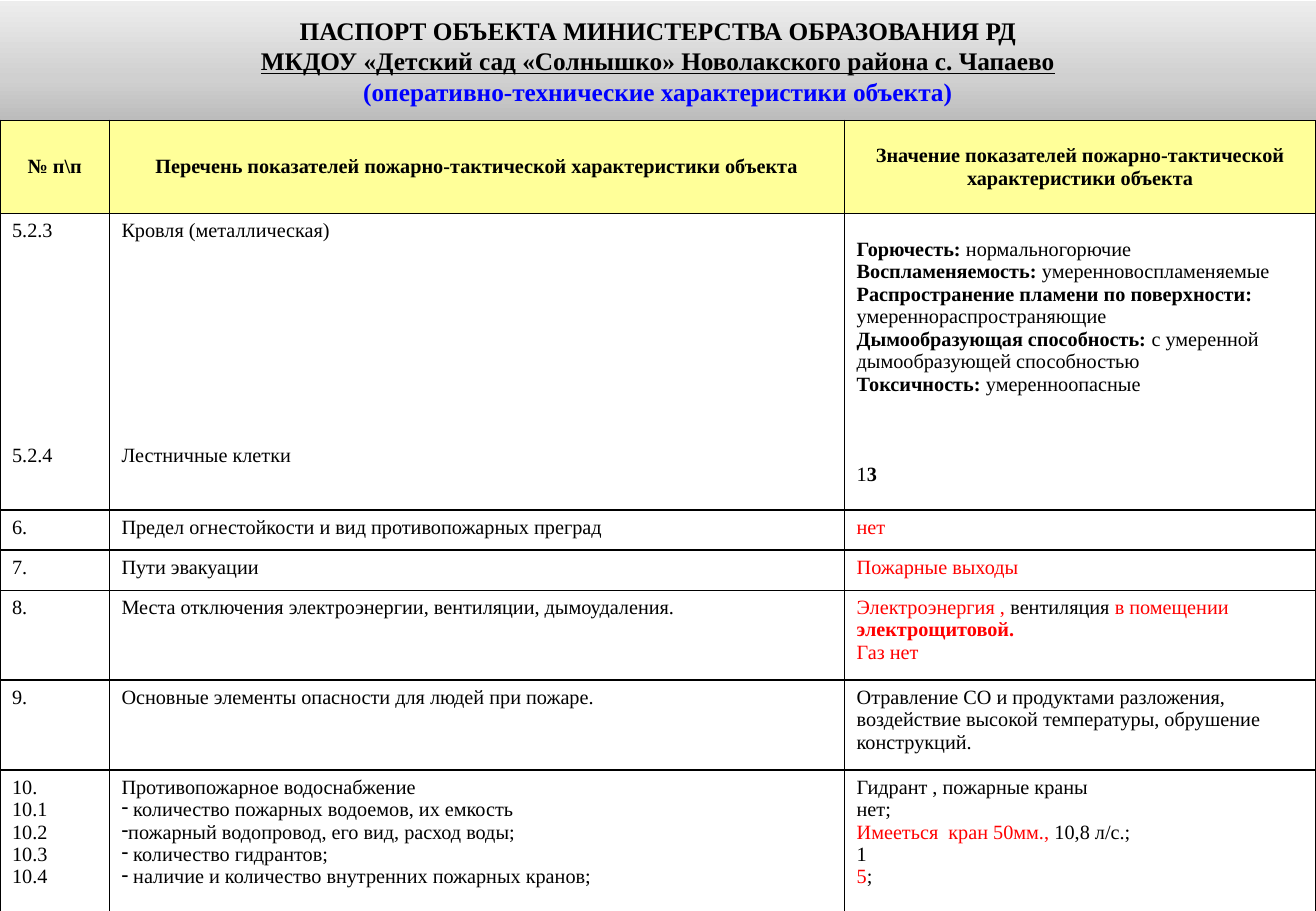
from copy import deepcopy
from dataclasses import dataclass

from pptx import Presentation
from pptx.dml.color import RGBColor
from pptx.enum.shapes import MSO_SHAPE
from pptx.enum.text import MSO_ANCHOR as Anchor, PP_ALIGN as Align
from pptx.oxml import parse_xml
from pptx.oxml.ns import nsdecls, qn
from pptx.util import Inches, Pt

FONT = "Times New Roman"
BLACK = RGBColor(0x00, 0x00, 0x00)
RED = RGBColor(0xFF, 0x00, 0x00)
BLUE = RGBColor(0x00, 0x00, 0xFF)
WHITE = RGBColor(0xFF, 0xFF, 0xFF)
YELLOW = RGBColor(0xFF, 0xFF, 0x99)
BANNER_STOPS = [(0, RGBColor(0xBC, 0xBC, 0xBC)), (0.35, RGBColor(0xD0, 0xD0, 0xD0)),
                (1, RGBColor(0xED, 0xED, 0xED))]
LINE_PITCH = 13.33  # points from line to line in the table
COLUMN_WIDTHS = [0.9, 6.05, 3.88]
ROW_HEIGHTS = [0.77, 2.44, 0.33, 0.33, 0.74, 0.74, 1.17]


@dataclass
class Span:
    text: str
    bold: bool = False
    color: RGBColor = BLACK
    underline: bool = False


@dataclass
class Para:
    spans: list[Span]
    lines_before: int = 0
    dash: bool = False


@dataclass
class Cell:
    paras: list[Para]
    fill: RGBColor = WHITE
    anchor: Anchor = Anchor.TOP
    align: Align = Align.LEFT


def plain(*lines: str, color: RGBColor = BLACK) -> Cell:
    return Cell([Para([Span(line, color=color)]) for line in lines])


def heading(text: str) -> Cell:
    return Cell([Para([Span(text, bold=True)])], YELLOW, Anchor.MIDDLE, Align.CENTER)


def pair(first: str, second: str) -> Cell:
    """Two entries of one cell, the second level with the stairwell row."""
    return Cell([Para([Span(first)]), Para([Span(second)], lines_before=9)])


def rating(label: str, value: str) -> Para:
    return Para([Span(label, bold=True), Span(value)])


def dashed(text: str) -> Para:
    return Para([Span(text)], dash=True)


TITLE = [
    Para([Span("ПАСПОРТ ОБЪЕКТА МИНИСТЕРСТВА ОБРАЗОВАНИЯ РД", True)]),
    Para([Span("МКДОУ «Детский сад «Солнышко» Новолакского района с. Чапаево", True,
               underline=True)]),
    Para([Span("(оперативно-технические характеристики объекта)", True, BLUE)]),
]

ROOF_RATINGS = Cell([
    rating("Горючесть: ", "нормальногорючие"),
    rating("Воспламеняемость: ", "умеренновоспламеняемые"),
    Para([Span("Распространение пламени по поверхности:", True)]),
    Para([Span("умереннораспространяющие")]),
    rating("Дымообразующая способность: ", "с умеренной дымообразующей способностью"),
    rating("Токсичность: ", "умеренноопасные"),
    Para([Span("1"), Span("3", True)], lines_before=3),
], anchor=Anchor.MIDDLE)

SHUTOFF = Cell([
    Para([Span("Электроэнергия , ", color=RED), Span("вентиляция "),
          Span("в помещении ", color=RED), Span("электрощитовой.", True, RED)]),
    Para([Span("Газ нет", color=RED)]),
])

WATER_SUPPLY = Cell([
    Para([Span("Противопожарное водоснабжение")]),
    dashed(" количество пожарных водоемов, их емкость"),
    dashed("пожарный водопровод, его вид, расход воды;"),
    dashed(" количество гидрантов;"),
    dashed(" наличие и количество внутренних пожарных кранов;"),
])

WATER_VALUES = Cell([
    Para([Span("Гидрант , пожарные краны")]),
    Para([Span("нет;")]),
    Para([Span("Имееться  кран 50мм.,", color=RED), Span(" 10,8 л/с.;")]),
    Para([Span("1")]),
    Para([Span("5", color=RED), Span(";")]),
])

ROWS = [
    [heading("№ п\\п"),
     heading("Перечень показателей пожарно-тактической характеристики объекта"),
     heading("Значение показателей пожарно-тактической характеристики объекта")],
    [pair("5.2.3", "5.2.4"), pair("Кровля (металлическая)", "Лестничные клетки"), ROOF_RATINGS],
    [plain("6."), plain("Предел огнестойкости и вид противопожарных преград"),
     plain("нет", color=RED)],
    [plain("7."), plain("Пути эвакуации"), plain("Пожарные выходы", color=RED)],
    [plain("8."), plain("Места отключения электроэнергии, вентиляции, дымоудаления."), SHUTOFF],
    [plain("9."), plain("Основные элементы опасности для людей при пожаре."),
     plain("Отравление СО и продуктами разложения, воздействие высокой температуры, "
           "обрушение конструкций.")],
    [plain("10.", "10.1", "10.2", "10.3", "10.4"), WATER_SUPPLY, WATER_VALUES],
]


def write_text(frame, paras: list[Para], size: float, align: Align) -> None:
    for index, para in enumerate(paras):
        paragraph = frame.paragraphs[0] if index == 0 else frame.add_paragraph()
        paragraph.alignment = align
        if para.lines_before:
            paragraph.space_before = Pt(para.lines_before * LINE_PITCH)
        if para.dash:
            properties = paragraph._p.get_or_add_pPr()
            properties.set("marL", "0")
            properties.set("indent", "0")
            properties.append(parse_xml(f'<a:buChar {nsdecls("a")} char="-"/>'))
        for span in para.spans:
            run = paragraph.add_run()
            run.text = span.text
            run.font.name = FONT
            run.font.size = Pt(size)
            run.font.bold = span.bold
            run.font.underline = span.underline
            run.font.color.rgb = span.color


def add_borders(cell) -> None:
    properties = cell._tc.get_or_add_tcPr()
    for side in ("lnL", "lnR", "lnT", "lnB"):
        properties.append(parse_xml(
            f'<a:{side} {nsdecls("a")} w="{Pt(1)}"><a:solidFill>'
            f'<a:srgbClr val="{BLACK}"/></a:solidFill></a:{side}>'))


def add_banner(page) -> None:
    banner = page.shapes.add_shape(MSO_SHAPE.RECTANGLE, 0, Inches(0.01),
                                   Inches(10.83), Inches(0.98))
    banner.shadow.inherit = False
    banner.line.fill.background()
    banner.fill.gradient()
    banner.fill.gradient_angle = 90
    stop_list = banner._element.spPr.find(".//" + qn("a:gsLst"))
    stop_list.append(deepcopy(stop_list[-1]))
    for stop, (position, color) in zip(banner.fill.gradient_stops, BANNER_STOPS):
        stop.position = position
        stop.color.rgb = color
    banner.text_frame.word_wrap = True
    banner.text_frame.vertical_anchor = Anchor.MIDDLE
    write_text(banner.text_frame, TITLE, 15, Align.CENTER)


def add_passport_table(page) -> None:
    table = page.shapes.add_table(len(ROWS), len(COLUMN_WIDTHS), 0, Inches(0.99),
                                  Inches(10.83), Inches(6.51)).table
    for column, width in zip(table.columns, COLUMN_WIDTHS):
        column.width = Inches(width)
    for row, height, contents in zip(table.rows, ROW_HEIGHTS, ROWS):
        row.height = Inches(height)
        for cell, content in zip(row.cells, contents):
            add_borders(cell)
            cell.fill.solid()
            cell.fill.fore_color.rgb = content.fill
            cell.vertical_anchor = content.anchor
            write_text(cell.text_frame, content.paras, 12, content.align)


def main() -> None:
    deck = Presentation()
    deck.slide_width, deck.slide_height = Inches(10.83), Inches(7.5)
    page = deck.slides.add_slide(deck.slide_layouts[6])
    add_banner(page)
    add_passport_table(page)
    deck.save("out.pptx")


if __name__ == "__main__":
    main()
